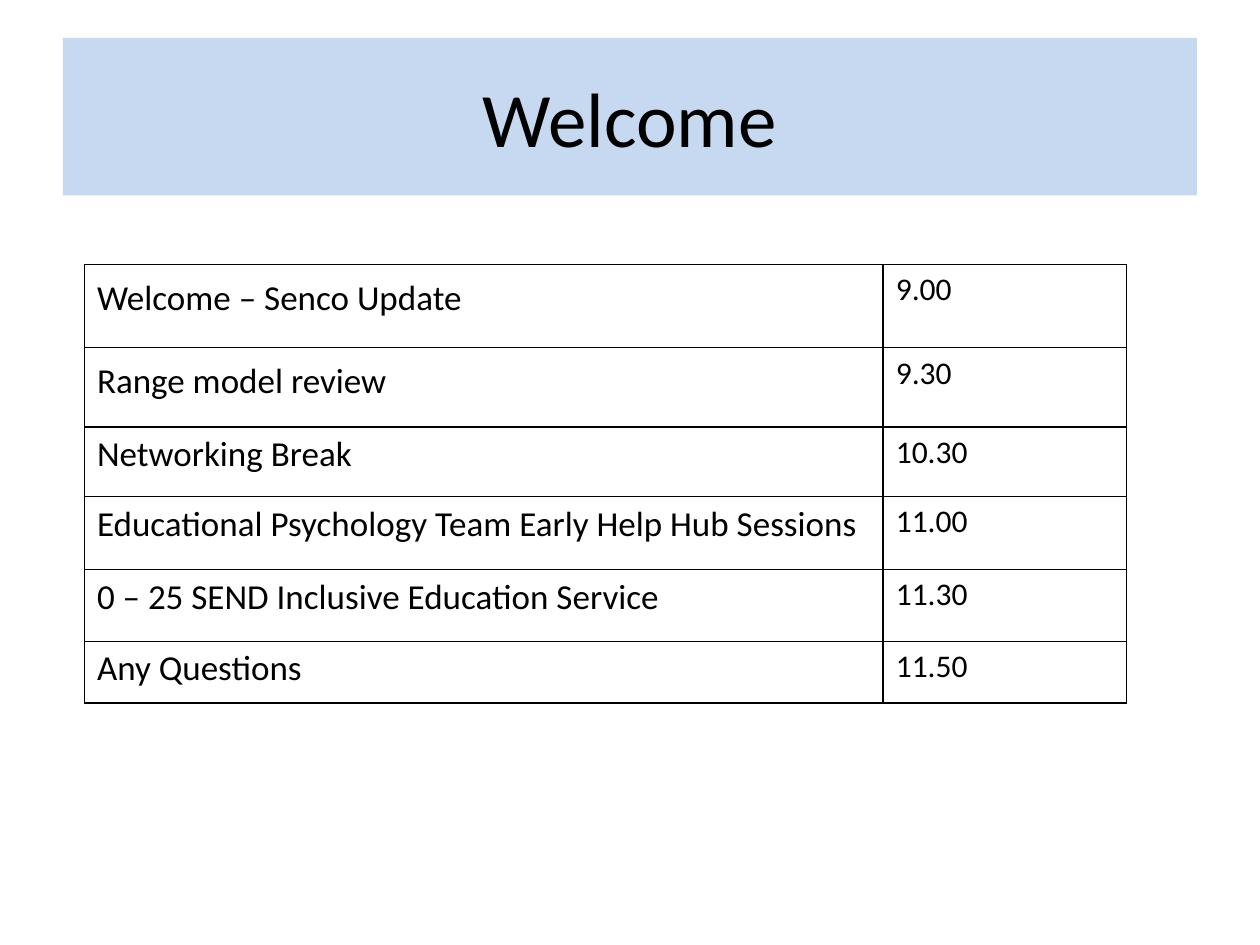
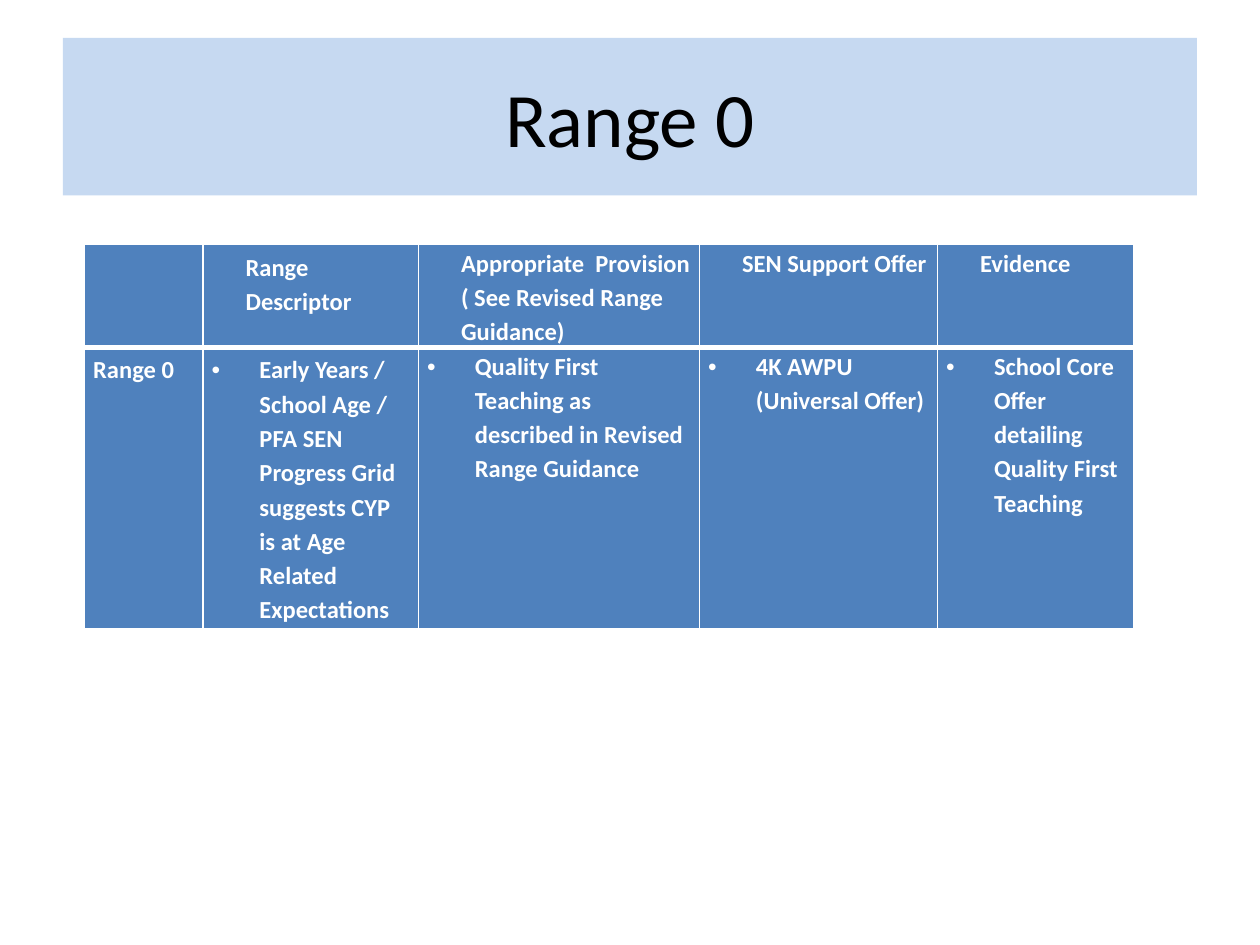
from dataclasses import dataclass

from lxml.etree import SubElement
from pptx import Presentation
from pptx.dml.color import RGBColor
from pptx.enum.shapes import MSO_SHAPE
from pptx.enum.text import MSO_ANCHOR, PP_ALIGN
from pptx.oxml.ns import qn
from pptx.slide import Slide
from pptx.table import _Cell
from pptx.text.text import _Paragraph
from pptx.util import Inches, Pt

FONT = "Calibri"
BLACK, WHITE = "000000", "FFFFFF"
TITLE_BAND, TABLE_BLUE = "C6D9F1", "4F81BD"
SIDES = ("L", "R", "T", "B")


@dataclass(frozen=True)
class Entry:
    """The text of one table cell and how it is set."""
    text: str
    size: float
    color: str
    bold: bool = False
    spacing: float = 1.0
    left: float = 0.0
    bullet: bool = False
    inset_x: float = 0.1
    inset_y: float = 0.05


@dataclass(frozen=True)
class Grid:
    left: float
    top: float
    columns: tuple[float, ...]
    rows: tuple[float, ...]


AGENDA_GRID = Grid(0.67, 2.1, (6.34, 1.93), (0.66, 0.63, 0.55, 0.58, 0.57, 0.49))
AGENDA = (
    ("Welcome – Senco Update", "9.00"),
    ("Range model review", "9.30"),
    ("Networking Break", "10.30"),
    ("Educational Psychology Team Early Help Hub Sessions", "11.00"),
    ("0 – 25 SEND Inclusive Education Service", "11.30"),
    ("Any Questions", "11.50"),
)
SPACED_AGENDA_ROWS = 2

RANGE_GRID = Grid(0.67, 1.94, (0.94, 1.71, 2.23, 1.89, 1.56), (0.8, 2.22))
RANGE_HEADINGS = ("", "Range Descriptor", "Appropriate  Provision ( See Revised Range Guidance)",
                  "SEN Support Offer", "Evidence")
RANGE_DETAILS = (
    "Range 0",
    "Early Years / School Age / PFA SEN Progress Grid suggests CYP is at Age Related Expectations",
    "Quality First Teaching as described in Revised Range Guidance",
    "4K AWPU (Universal Offer)",
    "School Core Offer detailing Quality First Teaching",
)


def rgb(value: str) -> RGBColor:
    return RGBColor.from_string(value)


def add_span(para: _Paragraph, text: str, size: float, color: str, bold: bool = False) -> None:
    span = para.add_run()
    span.text = text
    span.font.name = FONT
    span.font.size = Pt(size)
    span.font.bold = bold
    span.font.color.rgb = rgb(color)


def add_title(page: Slide, text: str) -> None:
    band = page.shapes.add_shape(MSO_SHAPE.RECTANGLE, Inches(0.5), Inches(0.3), Inches(9), Inches(1.25))
    band.shadow.inherit = False
    band.fill.solid()
    band.fill.fore_color.rgb = rgb(TITLE_BAND)
    band.line.fill.background()
    band.text_frame.word_wrap = True
    band.text_frame.vertical_anchor = MSO_ANCHOR.MIDDLE
    para = band.text_frame.paragraphs[0]
    para.alignment = PP_ALIGN.CENTER
    add_span(para, text, 44, BLACK)


def set_borders(cell: _Cell, color: str, widths: tuple[float, ...]) -> None:
    """Draw the cell edges; widths are in points, in the order of SIDES."""
    properties = cell._tc.get_or_add_tcPr()
    for side, width in zip(SIDES, widths):
        line = SubElement(properties, qn(f"a:ln{side}"), w=str(Pt(width)))
        SubElement(SubElement(line, qn("a:solidFill")), qn("a:srgbClr"), val=color)


def write_entry(cell: _Cell, entry: Entry) -> None:
    cell.margin_left = cell.margin_right = Inches(entry.inset_x)
    cell.margin_top = cell.margin_bottom = Inches(entry.inset_y)
    para = cell.text_frame.paragraphs[0]
    properties = para._p.get_or_add_pPr()
    properties.set("marL", str(Inches(entry.left)))
    if entry.bullet:
        properties.set("indent", str(-Inches(entry.left)))
        SubElement(properties, qn("a:buFont"), typeface="Arial")
        SubElement(properties, qn("a:buChar"), char="•")
    para.line_spacing = entry.spacing
    if entry.text:
        add_span(para, entry.text, entry.size, entry.color, entry.bold)
    else:
        para.font.size = Pt(entry.size)


def add_grid(page: Slide, grid: Grid, entries: list[list[Entry]], line_color: str,
             row_borders: list[tuple[float, ...]], fill: str | None = None) -> None:
    table = page.shapes.add_table(
        len(grid.rows), len(grid.columns), Inches(grid.left), Inches(grid.top),
        Inches(sum(grid.columns)), Inches(sum(grid.rows))).table
    table.first_row = table.horz_banding = False
    for column, width in zip(table.columns, grid.columns):
        column.width = Inches(width)
    for row, height, row_entries, widths in zip(table.rows, grid.rows, entries, row_borders):
        row.height = Inches(height)
        for cell, entry in zip(row.cells, row_entries):
            set_borders(cell, line_color, widths)
            if fill:
                cell.fill.solid()
                cell.fill.fore_color.rgb = rgb(fill)
            else:
                cell.fill.background()
            write_entry(cell, entry)


def range_entry(column: int, text: str, left: float, bullet: bool = False) -> Entry:
    inset_y = 0.03 if column < 2 else 0
    return Entry(text, 14, WHITE, True, 1.15, left, bullet, 0.07, inset_y)


def build_welcome(page: Slide) -> None:
    add_title(page, "Welcome")
    entries = [
        [Entry(topic, 20, BLACK, spacing=1.15 if index < SPACED_AGENDA_ROWS else 1.0),
         Entry(time, 18, BLACK)]
        for index, (topic, time) in enumerate(AGENDA)
    ]
    add_grid(page, AGENDA_GRID, entries, BLACK, [(1, 1, 1, 1)] * len(AGENDA))


def build_range(page: Slide) -> None:
    add_title(page, "Range 0")
    headings = [range_entry(column, text, 0.27) for column, text in enumerate(RANGE_HEADINGS)]
    details = [range_entry(column, text, 0.38 if column else 0, column > 0)
               for column, text in enumerate(RANGE_DETAILS)]
    add_grid(page, RANGE_GRID, [headings, details], WHITE, [(1, 1, 1, 3), (1, 1, 3, 1)], TABLE_BLUE)


def main() -> None:
    deck = Presentation()
    deck.slide_width, deck.slide_height = Inches(10), Inches(7.5)
    for build in (build_welcome, build_range):
        build(deck.slides.add_slide(deck.slide_layouts[6]))
    deck.save("out.pptx")


if __name__ == "__main__":
    main()
